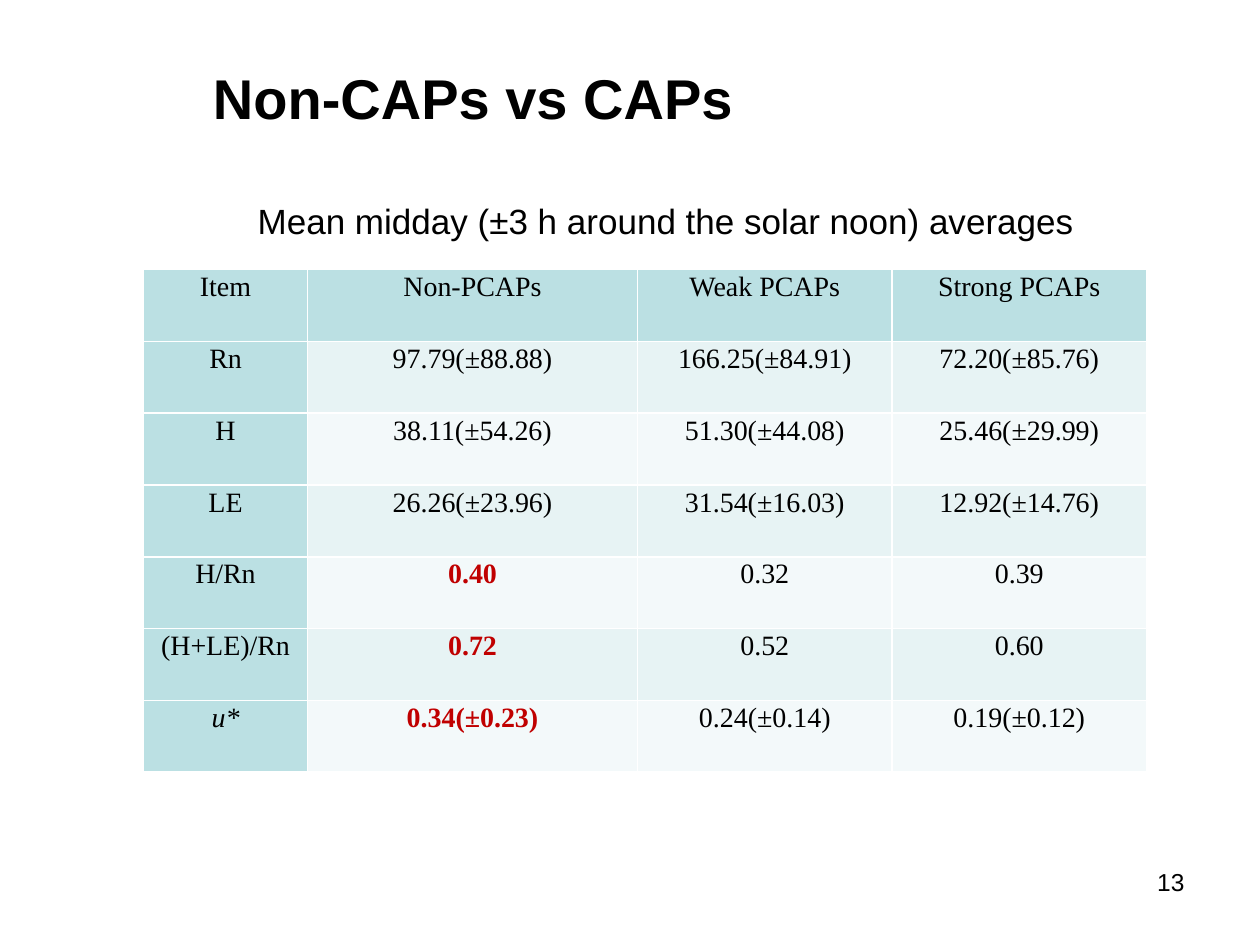
"""Build the slide comparing midday averages without and with cold-air pools."""
from lxml import etree
from pptx import Presentation
from pptx.dml.color import RGBColor
from pptx.enum.text import MSO_ANCHOR, MSO_AUTO_SIZE, PP_ALIGN
from pptx.oxml.ns import qn
from pptx.util import Inches, Pt

LEFT, CENTER, RIGHT = PP_ALIGN.LEFT, PP_ALIGN.CENTER, PP_ALIGN.RIGHT
TOP, MIDDLE = MSO_ANCHOR.TOP, MSO_ANCHOR.MIDDLE
NO_FIT = MSO_AUTO_SIZE.NONE

BLACK, WHITE, RED = "000000", "FFFFFF", "C00000"
HEADER, ODD, EVEN = "BBE0E3", "E7F3F4", "F3F9FA"
GRID_COLS, GRID_ROWS = 20, 15

ROWS = [
    ["Item", "Non-PCAPs", "Weak PCAPs", "Strong PCAPs"],
    ["Rn", "97.79(±88.88)", "166.25(±84.91)", "72.20(±85.76)"],
    ["H", "38.11(±54.26)", "51.30(±44.08)", "25.46(±29.99)"],
    ["LE", "26.26(±23.96)", "31.54(±16.03)", "12.92(±14.76)"],
    ["H/Rn", "0.40", "0.32", "0.39"],
    ["(H+LE)/Rn", "0.72", "0.52", "0.60"],
    ["u*", "0.34(±0.23)", "0.24(±0.14)", "0.19(±0.12)"],
]
COL_WIDTHS = [2.6, 5.24, 4.04, 4.04]
ROW_HEIGHT = 1.14
FIRST_RED_ROW = 4


def rgb(value):
    """Turn a hex string into a colour."""
    return RGBColor.from_string(value)


class Deck:
    """Hold the style and the current slide."""

    def __init__(self, font="Arial", table_font="Times New Roman"):
        """Start a deck with one title-and-content slide."""
        self.prs = Presentation()
        self.prs.slide_width, self.prs.slide_height = Inches(10), Inches(7.5)
        self.s = self.prs.slides.add_slide(self.prs.slide_layouts[1])
        self.font, self.table_font = font, table_font

    def x(self, cols):
        """Give the length of a number of grid columns."""
        return round(self.prs.slide_width * cols / GRID_COLS)

    def y(self, rows):
        """Give the length of a number of grid rows."""
        return round(self.prs.slide_height * rows / GRID_ROWS)

    def box(self, left, top, width, height):
        """Turn grid columns and rows into a position and size."""
        return self.x(left), self.y(top), self.x(width), self.y(height)

    def set_text(self, tf, text, size, font, align, color=BLACK, bold=False, italic=False):
        """Put one formatted paragraph in a text frame and return it."""
        tf.text = text
        p = tf.paragraphs[0]
        p.alignment = align
        f = p.runs[0].font
        f.name, f.size, f.bold, f.italic = font, Pt(size), bold, italic
        f.color.rgb = rgb(color)
        return p

    def fill_shape(self, sp, area, text, size, align, anchor=TOP, bold=False):
        """Place a text shape on the grid and set its text."""
        sp.left, sp.top, sp.width, sp.height = self.box(*area)
        tf = sp.text_frame
        tf.word_wrap, tf.auto_size, tf.vertical_anchor = True, NO_FIT, anchor
        return self.set_text(tf, text, size, self.font, align, bold=bold)

    def title(self, text, area):
        """Set the slide title."""
        p = self.fill_shape(self.s.shapes.title, area, text, 32, LEFT, MIDDLE, True)
        p.line_spacing = 0.9

    def subtitle(self, text, area):
        """Set the body as one line without a bullet."""
        p = self.fill_shape(self.s.placeholders[1], area, text, 20, CENTER)
        p.space_before = Pt(0)
        pr = p._p.get_or_add_pPr()
        pr.set("marL", "0")
        pr.set("indent", "0")
        etree.SubElement(pr, qn("a:buNone"))

    def page_number(self, text, area):
        """Add the page number."""
        sp = self.s.shapes.add_textbox(*self.box(*area))
        self.fill_shape(sp, area, text, 14, RIGHT)

    def borders(self, cell):
        """Draw thin white lines around a cell."""
        pr = cell._tc.get_or_add_tcPr()
        for i, side in enumerate(("a:lnL", "a:lnR", "a:lnT", "a:lnB")):
            ln = etree.Element(qn(side), w=str(Pt(1)))
            fill = etree.SubElement(ln, qn("a:solidFill"))
            etree.SubElement(fill, qn("a:srgbClr"), val=WHITE)
            pr.insert(i, ln)

    def cell(self, cell, text, fill, **style):
        """Fill and frame one table cell and set its text."""
        cell.fill.solid()
        cell.fill.fore_color.rgb = rgb(fill)
        cell.margin_left = cell.margin_right = Inches(0.07)
        cell.margin_top = cell.margin_bottom = 0
        p = self.set_text(cell.text_frame, text, 16, self.table_font, CENTER, **style)
        p.line_spacing = 1.07
        self.borders(cell)

    def table(self, rows, left, top):
        """Add the table with a coloured header row and first column."""
        area = self.box(left, top, sum(COL_WIDTHS), ROW_HEIGHT * len(rows))
        tbl = self.s.shapes.add_table(len(rows), len(COL_WIDTHS), *area).table
        for col, width in zip(tbl.columns, COL_WIDTHS):
            col.width = self.x(width)
        for r, values in enumerate(rows):
            tbl.rows[r].height = self.y(ROW_HEIGHT)
            for c, text in enumerate(values):
                fill = HEADER if r == 0 or c == 0 else ODD if r % 2 else EVEN
                red = c == 1 and r >= FIRST_RED_ROW
                self.cell(tbl.cell(r, c), text, fill, color=RED if red else BLACK,
                          bold=red, italic=text == "u*")


def main():
    """Build and save the slide."""
    deck = Deck()
    deck.title("Non-CAPs vs CAPs", (3.18, 0.78, 16.16, 1.66))
    deck.subtitle("Mean midday (±3 h around the solar noon) averages",
                  (1.14, 3.06, 18.86, 1.02))
    deck.table(ROWS, 2.28, 4.28)
    deck.page_number("13", (14.34, 13.66, 4.66, 1.04))
    deck.prs.save("out.pptx")


if __name__ == "__main__":
    main()
